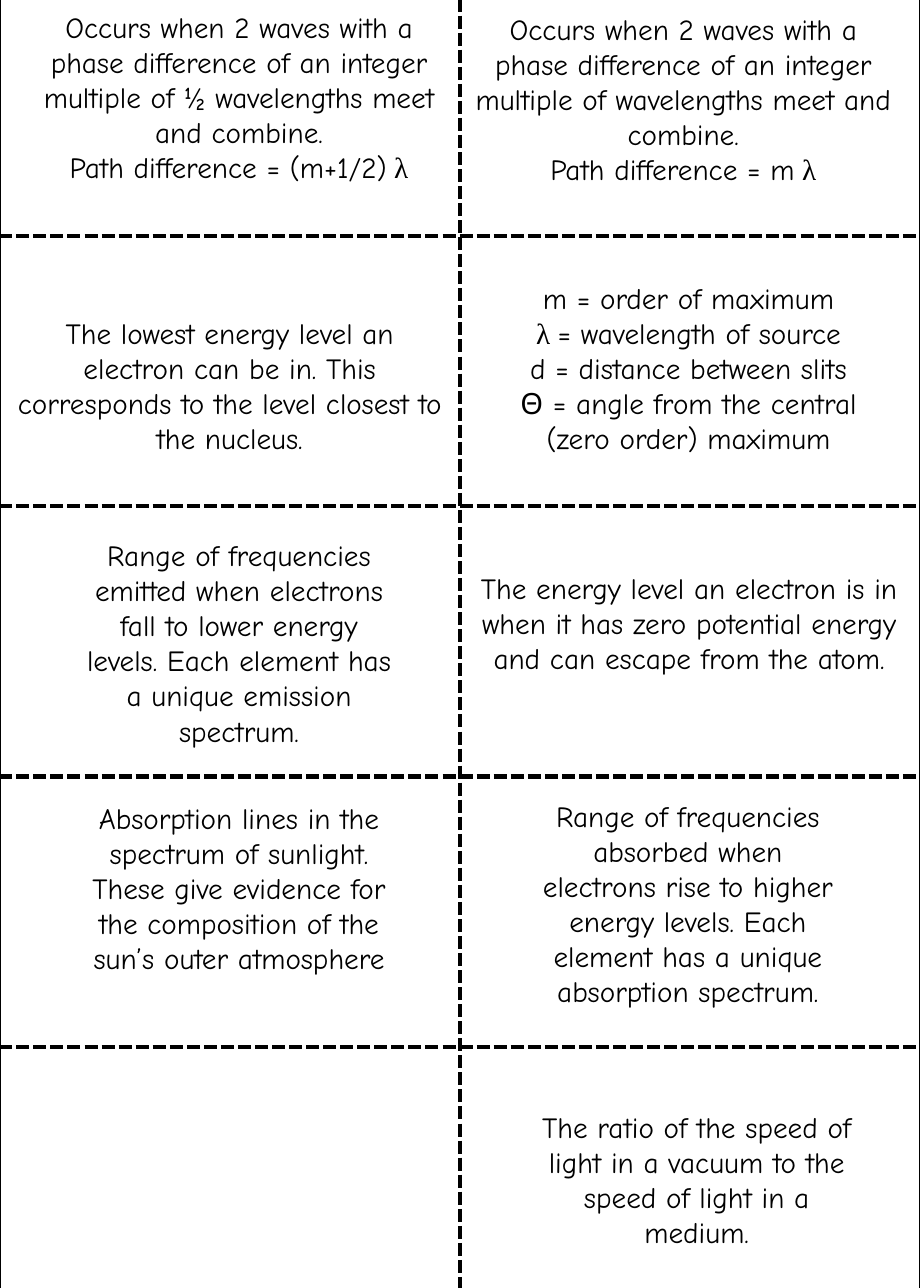
"""Builds a sheet of cut-out physics definition cards."""
from dataclasses import dataclass

from lxml.etree import SubElement
from pptx import Presentation
from pptx.dml.color import RGBColor as Color
from pptx.enum.text import MSO_AUTO_SIZE as AutoSize, PP_ALIGN as Align
from pptx.oxml.ns import qn
from pptx.util import Inches, Pt

WIDTH, HEIGHT = Inches(7.87), Inches(11.02)
COLUMNS, ROWS = 2, 5


@dataclass(frozen=True)
class Theme:
    """Colours, fonts and sizes of the sheet."""
    ink: str = "000000"
    font: str = "Comic Neue"
    greek_font: str = "Times New Roman"
    text_size: float = 18
    outer_line: float = 1
    cut_line: float = 3


THEME = Theme()

# Left, top and width in percent of the slide, height in lines, paragraphs of text pieces.
CARDS = [
    (50.32, 0.45, 47.9, 6, [
        ["Occurs when 2 waves with a phase difference of an integer multiple of "
         "wavelengths meet and combine."],
        ["Path difference = m", " λ"]]),
    (53.24, 21.32, 43.2, 6, [
        ["m = order of maximum"],
        ["λ ", "= wavelength of source"],
        ["d = distance between slits"],
        ["Θ = angle from the central (zero order) maximum"]]),
    (7.88, 61.71, 36.21, 7, [
        ["Absorption lines in the spectrum of sunlight. These give evidence for "
         "the composition of the sun’s outer atmosphere"]]),
    (56.67, 85.66, 38.12, 4, [
        ["The ratio of the speed of light in a vacuum to the speed of light in a "
         "medium."]]),
    (0.51, 24.05, 48.92, 4, [
        ["The lowest energy level an electron can be in. This corresponds to the "
         "level closest to the nucleus."]]),
    (2.03, 0.27, 47.9, 6, [
        ["Occurs when 2 waves with a phase difference of an integer multiple of "
         "½ wavelengths meet and combine."],
        ["Path difference = (m+1/2)", " λ"]]),
    (50.44, 43.83, 48.92, 4, [
        ["The energy level an electron is in when it has zero potential energy "
         "and can escape from the atom."]]),
    (7.88, 41.29, 36.21, 7, [
        ["Range of frequencies emitted when electrons fall to lower energy "
         "levels. Each element has a unique emission spectrum."]]),
    (56.67, 61.52, 36.21, 8, [
        ["Range of frequencies absorbed when electrons rise to higher energy "
         "levels. Each element has a unique absorption spectrum."]]),
]


def add_border(cell, side, is_outer):
    """Draw one cell side: thin and solid outside, thick and dashed for cutting."""
    width = THEME.outer_line if is_outer else THEME.cut_line
    line = SubElement(cell._tc.get_or_add_tcPr(), qn(f"a:ln{side}"), w=str(Pt(width)))
    SubElement(SubElement(line, qn("a:solidFill")), qn("a:srgbClr"), val=THEME.ink)
    SubElement(line, qn("a:prstDash"), val="solid" if is_outer else "dash")


def add_cutting_grid(slide):
    """Add the table whose inner borders are the cutting lines."""
    grid = slide.shapes.add_table(
        ROWS, COLUMNS, 0, round(-0.027 * HEIGHT), WIDTH, round(1.05 * HEIGHT)).table
    grid.first_row = grid.horz_banding = False
    for row in range(ROWS):
        for column in range(COLUMNS):
            cell = grid.cell(row, column)
            add_border(cell, "L", column == 0)
            add_border(cell, "R", column == COLUMNS - 1)
            add_border(cell, "T", row == 0)
            add_border(cell, "B", row == ROWS - 1)
            cell.fill.background()


def write_paragraph(paragraph, pieces):
    """Write centred text, with the pieces that hold lambda in the Greek font."""
    paragraph.alignment = Align.CENTER
    for piece in pieces:
        run = paragraph.add_run()
        run.text = piece
        run.font.name = THEME.greek_font if "λ" in piece else THEME.font
        run.font.size = Pt(THEME.text_size)
        run.font.color.rgb = Color.from_string(THEME.ink)


def add_definition(slide, left, top, width, lines, paragraphs):
    """Add the text of one card."""
    height = Inches(0.1 + 0.3 * lines)
    frame = slide.shapes.add_textbox(
        round(left / 100 * WIDTH), round(top / 100 * HEIGHT),
        round(width / 100 * WIDTH), height).text_frame
    frame.word_wrap = True
    frame.auto_size = AutoSize.SHAPE_TO_FIT_TEXT
    for index, pieces in enumerate(paragraphs):
        write_paragraph(frame.add_paragraph() if index else frame.paragraphs[0], pieces)


def main():
    """Build the sheet and save it."""
    deck = Presentation()
    deck.slide_width, deck.slide_height = WIDTH, HEIGHT
    sheet = deck.slides.add_slide(deck.slide_layouts[6])
    add_cutting_grid(sheet)
    for card in CARDS:
        add_definition(sheet, *card)
    deck.save("out.pptx")


if __name__ == "__main__":
    main()
